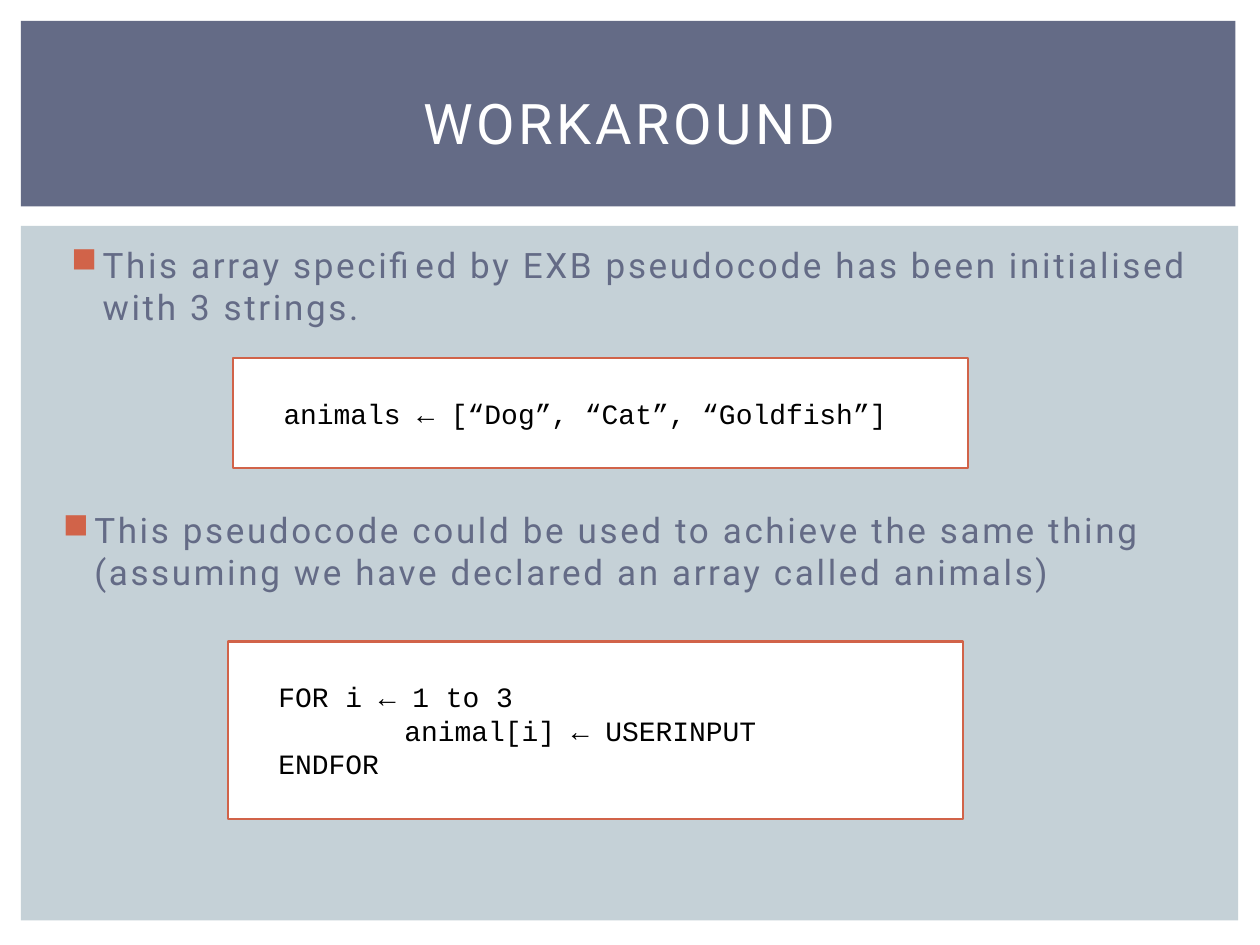
from dataclasses import dataclass

from lxml.etree import SubElement
from pptx import Presentation
from pptx.dml.color import RGBColor
from pptx.enum.shapes import MSO_SHAPE
from pptx.enum.text import MSO_ANCHOR, PP_ALIGN
from pptx.oxml.ns import qn
from pptx.util import Pt


@dataclass(frozen=True)
class Theme:
    slate: RGBColor = RGBColor.from_string("646B86")
    mist: RGBColor = RGBColor.from_string("C5D1D7")
    rust: RGBColor = RGBColor.from_string("D16349")
    white: RGBColor = RGBColor.from_string("FFFFFF")
    black: RGBColor = RGBColor.from_string("000000")
    text_font: str = "Roboto"
    code_font: str = "Courier New"
    title_size: int = 32
    body_size: int = 20
    code_size: int = 16


THEME = Theme()


def add_rectangle(page, box, fill, line=None):
    shape = page.shapes.add_shape(MSO_SHAPE.RECTANGLE, *map(Pt, box))
    shape.shadow.inherit = False
    shape.fill.solid()
    shape.fill.fore_color.rgb = fill
    if line is None:
        shape.line.fill.background()
    else:
        shape.line.color.rgb = line
        shape.line.width = Pt(1.5)
    return shape


def add_text(page, box, text):
    frame = page.shapes.add_textbox(*map(Pt, box)).text_frame
    frame.word_wrap = True
    frame.text = text
    return frame


def style_runs(para, font, size, color, spacing=0):
    """Format every run; spacing is the extra gap between letters in points."""
    for span in para.runs:
        span.font.name = font
        span.font.size = Pt(size)
        span.font.color.rgb = color
        if spacing:
            span.font._element.set("spc", str(round(spacing * 100)))


def add_title(page, box, text):
    frame = add_text(page, box, text)
    frame.vertical_anchor = MSO_ANCHOR.MIDDLE
    para = frame.paragraphs[0]
    para.alignment = PP_ALIGN.CENTER
    style_runs(para, THEME.text_font, THEME.title_size, THEME.white, 2)


def add_bullet(page, box, text):
    para = add_text(page, box, text).paragraphs[0]
    para.space_before = Pt(2)
    style_runs(para, THEME.text_font, THEME.body_size, THEME.slate, 1.5)
    properties = para._p.get_or_add_pPr()
    properties.set("marL", str(Pt(21.6)))
    properties.set("indent", str(Pt(-18)))
    color = SubElement(properties, qn("a:buClr"))
    SubElement(color, qn("a:srgbClr")).set("val", str(THEME.rust))
    SubElement(properties, qn("a:buChar")).set("char", "■")


def add_code(page, box, lines):
    """Draw a framed listing; each line is a pair of indent depth and text."""
    frame = add_rectangle(page, box, THEME.white, THEME.rust).text_frame
    frame.word_wrap = True
    frame.vertical_anchor = MSO_ANCHOR.TOP
    frame.margin_left = Pt(28.8)
    frame.margin_top = Pt(22)
    frame.text = "\n".join(text for _, text in lines)
    for para, (depth, _) in zip(frame.paragraphs, lines):
        para.alignment = PP_ALIGN.LEFT
        para._p.get_or_add_pPr().set("marL", str(Pt(72 * depth)))
        style_runs(para, THEME.code_font, THEME.code_size, THEME.black)


def add_workaround_slide(deck):
    page = deck.slides.add_slide(deck.slide_layouts[6])
    add_rectangle(page, (12, 129, 695.5, 397), THEME.mist)
    add_rectangle(page, (12, 12, 694, 106), THEME.slate)
    add_title(page, (30, 28, 660, 83), "WORKAROUND")
    add_bullet(
        page, (30, 135.4, 662, 60),
        "This array specified by EXB pseudocode has been initialised with 3 strings.",
    )
    add_code(page, (133.2, 204.5, 420, 63), [(0, "animals ← [“Dog”, “Cat”, “Goldfish”]")])
    add_bullet(
        page, (25.2, 287.3, 662, 60),
        "This pseudocode could be used to achieve the same thing "
        "(assuming we have declared an array called animals)",
    )
    add_code(
        page, (130.3, 366.5, 420, 101.5),
        [(0, "FOR i ← 1 to 3"), (1, "animal[i] ← USERINPUT"), (0, "ENDFOR")],
    )


def main():
    deck = Presentation()
    deck.slide_width, deck.slide_height = Pt(720), Pt(540)
    add_workaround_slide(deck)
    deck.save("out.pptx")


if __name__ == "__main__":
    main()
